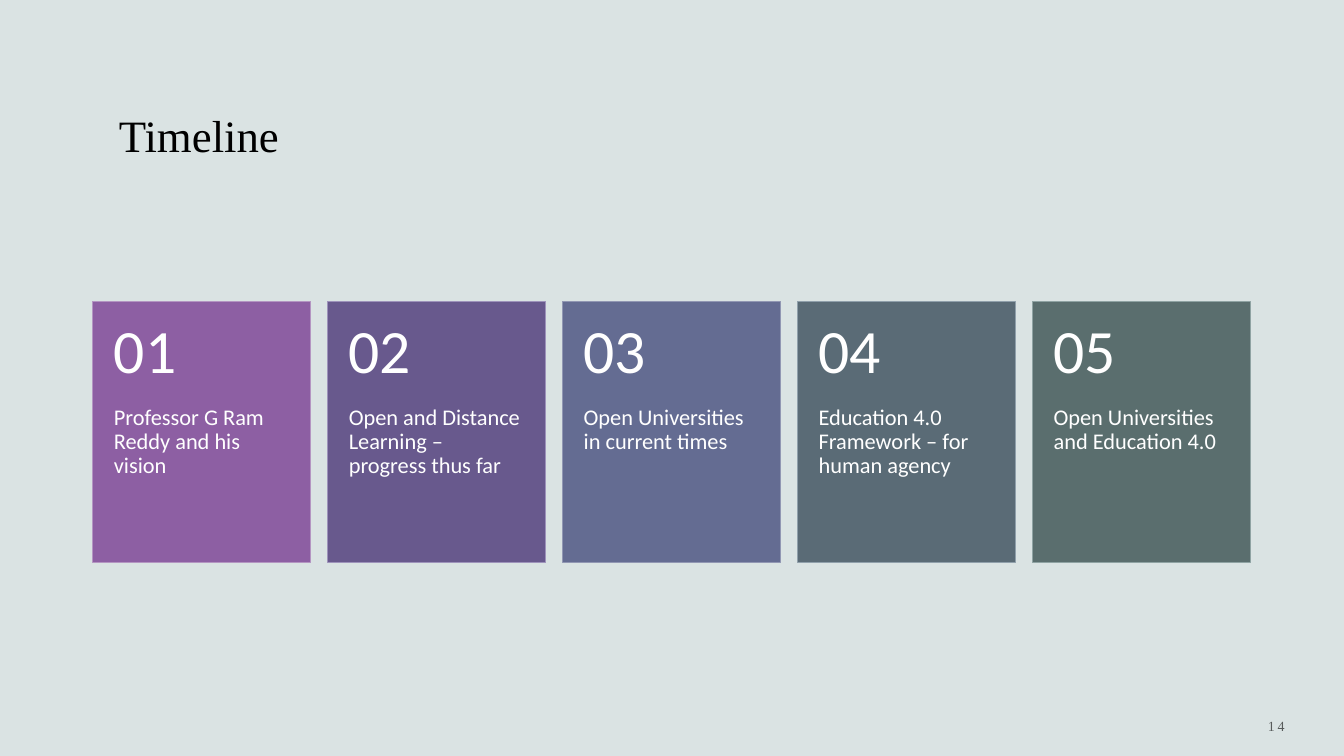
from pptx import Presentation
from pptx.dml.color import RGBColor
from pptx.enum.shapes import MSO_SHAPE
from pptx.enum.text import MSO_ANCHOR, PP_ALIGN
from pptx.util import Inches, Pt

RECTANGLE = MSO_SHAPE.RECTANGLE
TOP, MIDDLE, BOTTOM = MSO_ANCHOR.TOP, MSO_ANCHOR.MIDDLE, MSO_ANCHOR.BOTTOM
LEFT, RIGHT = PP_ALIGN.LEFT, PP_ALIGN.RIGHT

# Content: card text, fill, outline
TITLE = "Timeline"
PAGE_NUMBER = "14"
CARDS = [
    ("Professor G Ram Reddy and his vision",
     RGBColor(0x8D, 0x5F, 0xA3), RGBColor(0xB4, 0x95, 0xC2)),
    ("Open and Distance Learning – progress thus far",
     RGBColor(0x68, 0x59, 0x8D), RGBColor(0x9E, 0x93, 0xBB)),
    ("Open Universities in current times",
     RGBColor(0x64, 0x6C, 0x92), RGBColor(0x91, 0x97, 0xB3)),
    ("Education 4.0 Framework – for human agency",
     RGBColor(0x5A, 0x6B, 0x76), RGBColor(0x90, 0xA0, 0xAB)),
    ("Open Universities and Education 4.0",
     RGBColor(0x5A, 0x6E, 0x6E), RGBColor(0x8F, 0xA3, 0xA3)),
]

# Style
BACKGROUND = RGBColor(0xDA, 0xE3, 0xE3)
BLACK = RGBColor(0x00, 0x00, 0x00)
GRAY = RGBColor(0x57, 0x5B, 0x5B)
WHITE = RGBColor(0xFF, 0xFF, 0xFF)
SERIF, SANS = "Times New Roman", "Calibri"

# Card row, in inches
ROW_LEFT, ROW_TOP, PITCH = 0.92, 2.99, 2.33
CARD_WIDTH, CARD_HEIGHT, NUMBER_HEIGHT = 2.16, 2.59, 1.04
DEFAULT_INSETS = (0.1, 0.05, 0.1, 0.05)
NUMBER_INSETS = (0.21, 0.18, 0.21, 0.18)
LABEL_INSETS = (0.21, 0, 0.21, 0.36)


def add_text(page, place, text, font, size, color, anchor=TOP, align=LEFT,
             insets=DEFAULT_INSETS, line_spacing=1.0):
    box = page.shapes.add_textbox(*map(Inches, place))
    frame = box.text_frame
    frame.word_wrap = True
    frame.vertical_anchor = anchor
    (frame.margin_left, frame.margin_top,
     frame.margin_right, frame.margin_bottom) = map(Inches, insets)
    para = frame.paragraphs[0]
    para.alignment = align
    para.line_spacing = line_spacing
    span = para.add_run()
    span.text = text
    span.font.name = font
    span.font.size = Pt(size)
    span.font.color.rgb = color
    return span


def add_card(page, index, label, fill, outline):
    left = ROW_LEFT + index * PITCH
    card = page.shapes.add_shape(RECTANGLE, Inches(left), Inches(ROW_TOP),
                                 Inches(CARD_WIDTH), Inches(CARD_HEIGHT))
    card.shadow.inherit = False
    card.fill.solid()
    card.fill.fore_color.rgb = fill
    card.line.color.rgb = outline
    card.line.width = Pt(0.85)
    add_text(page, (left, ROW_TOP + NUMBER_HEIGHT, CARD_WIDTH, CARD_HEIGHT - NUMBER_HEIGHT),
             label, SANS, 16, WHITE, insets=LABEL_INSETS, line_spacing=0.9)
    add_text(page, (left, ROW_TOP, CARD_WIDTH, NUMBER_HEIGHT), f"{index + 1:02d}",
             SANS, 44, WHITE, MIDDLE, insets=NUMBER_INSETS, line_spacing=0.9)


def main():
    deck = Presentation()
    deck.slide_width, deck.slide_height = Inches(13.33), Inches(7.5)
    page = deck.slides.add_slide(deck.slide_layouts[6])
    page.background.fill.solid()
    page.background.fill.fore_color.rgb = BACKGROUND

    # Title
    add_text(page, (1.08, 0.43, 11.17, 1.22), TITLE, SERIF, 32, BLACK, BOTTOM)

    # Timeline cards
    for index, card in enumerate(CARDS):
        add_card(page, index, *card)

    # Page number, letter-spaced by 2 pt
    number = add_text(page, (10.92, 6.95, 1.92, 0.5), PAGE_NUMBER, SERIF, 10, GRAY, MIDDLE, RIGHT)
    number.font._element.set("spc", "200")

    deck.save("out.pptx")


if __name__ == "__main__":
    main()
